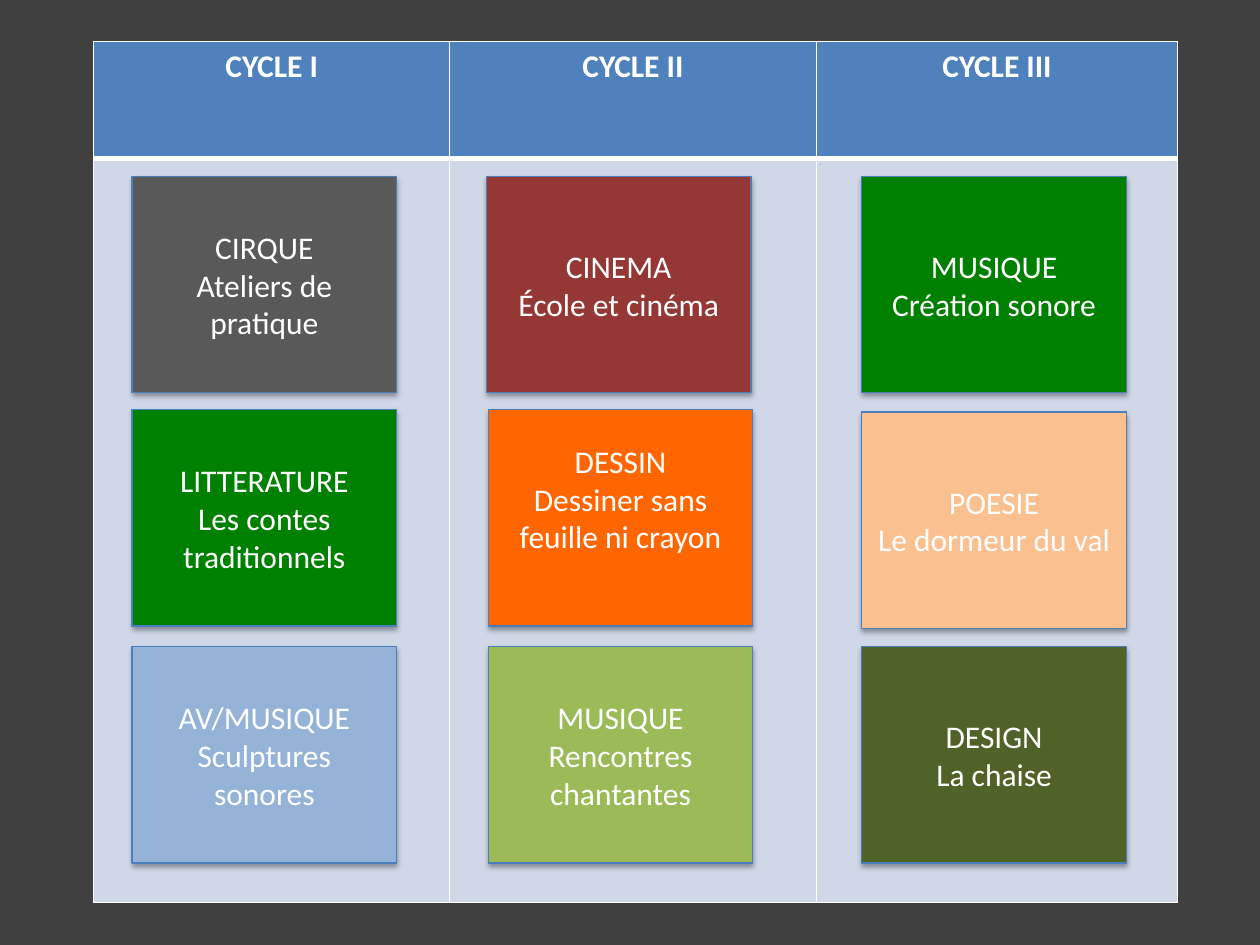
from dataclasses import dataclass

from lxml.etree import SubElement
from pptx import Presentation
from pptx.dml.color import RGBColor
from pptx.enum.shapes import MSO_SHAPE
from pptx.enum.text import MSO_ANCHOR, PP_ALIGN
from pptx.oxml.ns import qn
from pptx.util import Pt

BACKGROUND = RGBColor(0x40, 0x40, 0x40)
WHITE = RGBColor(0xFF, 0xFF, 0xFF)
BLACK = RGBColor(0x00, 0x00, 0x00)
HEADER_BLUE = RGBColor(0x4F, 0x81, 0xBD)
BODY_BLUE = RGBColor(0xD0, 0xD8, 0xE8)
OUTLINE_BLUE = RGBColor(0x4B, 0x7E, 0xBC)
GREY = RGBColor(0x59, 0x59, 0x59)
GREEN = RGBColor(0x00, 0x80, 0x00)
RED = RGBColor(0x95, 0x37, 0x35)
ORANGE = RGBColor(0xFF, 0x66, 0x00)
PALE_BLUE = RGBColor(0x95, 0xB3, 0xD7)
LIGHT_GREEN = RGBColor(0x9B, 0xBB, 0x59)
PEACH = RGBColor(0xFA, 0xC0, 0x90)
OLIVE = RGBColor(0x4F, 0x62, 0x28)


@dataclass
class Workshop:
    discipline: str
    activity: str
    color: RGBColor
    shift_x: float = 0
    shift_y: float = 0
    space_below: float = 0


CYCLES = {
    "CYCLE I": [
        Workshop("CIRQUE", "Ateliers de pratique", GREY),
        Workshop("LITTERATURE", "Les contes traditionnels", GREEN),
        Workshop("AV/MUSIQUE", "Sculptures sonores", PALE_BLUE),
    ],
    "CYCLE II": [
        Workshop("CINEMA", "École et cinéma", RED, shift_x=-1),
        Workshop("DESSIN", "Dessiner sans feuille ni crayon", ORANGE, space_below=22),
        Workshop("MUSIQUE", "Rencontres chantantes", LIGHT_GREEN),
    ],
    "CYCLE III": [
        Workshop("MUSIQUE", "Création sonore", GREEN),
        Workshop("POESIE", "Le dormeur du val", PEACH, shift_y=1.5),
        Workshop("DESIGN", "La chaise", OLIVE),
    ],
}
COLUMN_WIDTHS = (203.5, 209.5, 206.5)
ROW_HEIGHTS = (67, 425)
CARD_LEFTS = (75.5, 279, 492.5)
CARD_TOPS = (100.75, 234, 369.5)


@dataclass
class CycleSlide:
    slide: object
    font: str = "Calibri"
    size: float = 18
    card_width: float = 151.2
    card_height: float = 123.75

    def background(self, color):
        self.slide.background.fill.solid()
        self.slide.background.fill.fore_color.rgb = color

    def text(self, paragraph, wording, bold=False):
        paragraph.alignment = PP_ALIGN.CENTER
        run = paragraph.add_run()
        run.text = wording
        run.font.name = self.font
        run.font.size = Pt(self.size)
        run.font.bold = bold
        run.font.color.rgb = WHITE

    def border(self, cell, side, width):
        line = SubElement(cell._tc.get_or_add_tcPr(), qn(f"a:{side}"), w=str(Pt(width)))
        fill = SubElement(line, qn("a:solidFill"))
        SubElement(fill, qn("a:srgbClr"), val=str(WHITE))

    def table(self, left, top, headings):
        frame = self.slide.shapes.add_table(
            len(ROW_HEIGHTS), len(headings), Pt(left), Pt(top),
            Pt(sum(COLUMN_WIDTHS)), Pt(sum(ROW_HEIGHTS)))
        grid = frame.table
        grid.horz_banding = False
        for column, width in zip(grid.columns, COLUMN_WIDTHS):
            column.width = Pt(width)
        rows = zip(grid.rows, ROW_HEIGHTS, (HEADER_BLUE, BODY_BLUE), (1, 3), (3, 1))
        for row, height, color, above, below in rows:
            row.height = Pt(height)
            for cell in row.cells:
                for side, width in zip(("lnL", "lnR", "lnT", "lnB"), (1, 1, above, below)):
                    self.border(cell, side, width)
                cell.fill.solid()
                cell.fill.fore_color.rgb = color
        for cell, heading in zip(grid.rows[0].cells, headings):
            self.text(cell.text_frame.paragraphs[0], heading, bold=True)

    def shadow(self, card):
        card.shadow.inherit = False
        effects = card._element.spPr.find(qn("a:effectLst"))
        outer = SubElement(effects, qn("a:outerShdw"), blurRad=str(Pt(3.1)),
                           dist=str(Pt(1.8)), dir="5400000", rotWithShape="0")
        color = SubElement(outer, qn("a:srgbClr"), val=str(BLACK))
        SubElement(color, qn("a:alpha"), val="35000")

    def card(self, workshop, left, top):
        card = self.slide.shapes.add_shape(
            MSO_SHAPE.RECTANGLE, Pt(left + workshop.shift_x), Pt(top + workshop.shift_y),
            Pt(self.card_width), Pt(self.card_height))
        card.fill.solid()
        card.fill.fore_color.rgb = workshop.color
        card.line.color.rgb = OUTLINE_BLUE
        card.line.width = Pt(0.75)
        self.shadow(card)
        frame = card.text_frame
        frame.word_wrap = True
        frame.vertical_anchor = MSO_ANCHOR.MIDDLE
        frame.margin_bottom = Pt(3.6 + workshop.space_below)
        self.text(frame.paragraphs[0], workshop.discipline)
        self.text(frame.add_paragraph(), workshop.activity)


def main():
    presentation = Presentation()
    presentation.slide_width = Pt(720)
    presentation.slide_height = Pt(540)
    page = CycleSlide(presentation.slides.add_slide(presentation.slide_layouts[6]))
    page.background(BACKGROUND)
    page.table(53.5, 23.75, list(CYCLES))
    for left, workshops in zip(CARD_LEFTS, CYCLES.values()):
        for top, workshop in zip(CARD_TOPS, workshops):
            page.card(workshop, left, top)
    presentation.save("out.pptx")


if __name__ == "__main__":
    main()
